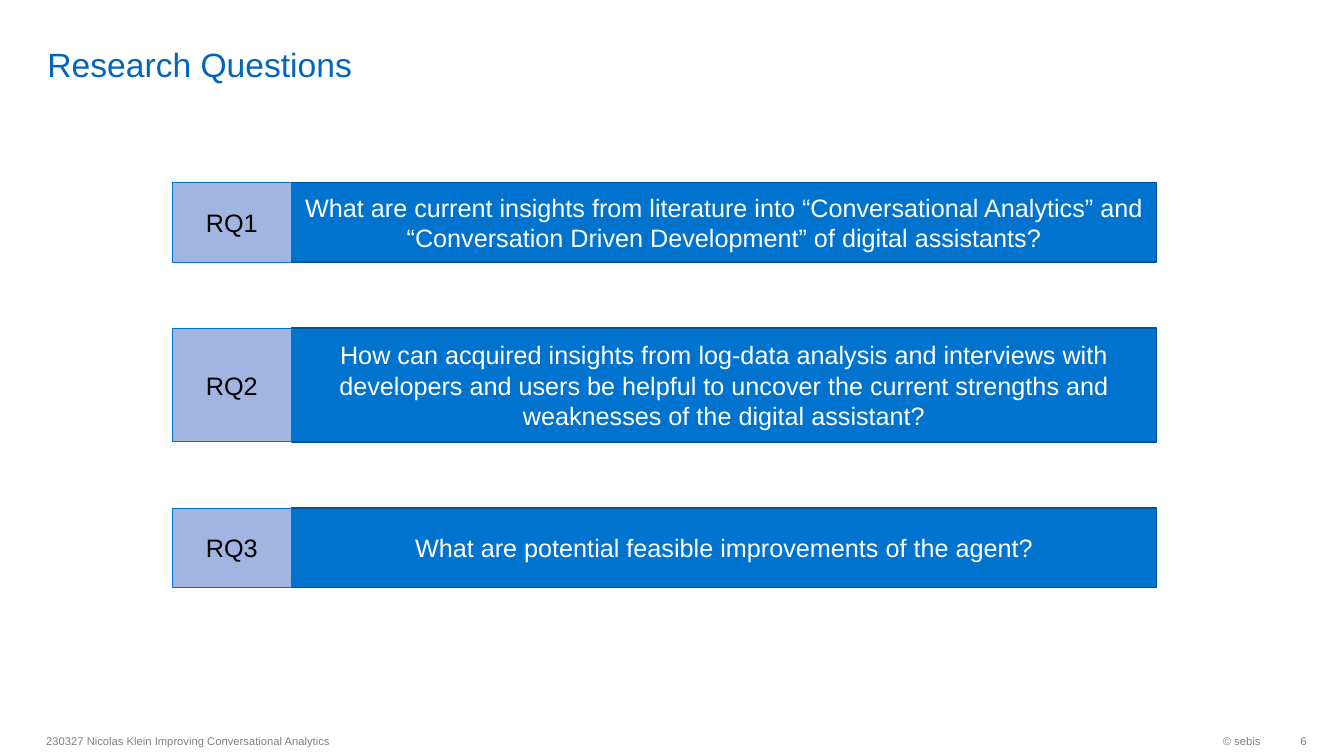
from pptx import Presentation
from pptx.dml.color import RGBColor
from pptx.enum.shapes import MSO_SHAPE
from pptx.enum.text import MSO_ANCHOR as Anchor, PP_ALIGN as Align
from pptx.util import Inches, Pt

# Content
HEADING = "Research Questions"
QUESTIONS = [  # label, question, row height
    ("RQ1", "What are current insights from literature into “Conversational Analytics” and "
            "“Conversation Driven Development” of digital assistants?", 0.79),
    ("RQ2", "How can acquired insights from log-data analysis and interviews with developers "
            "and users be helpful to uncover the current strengths and weaknesses of the "
            "digital assistant?", 1.13),
    ("RQ3", "What are potential feasible improvements of the agent?", 0.79),
]
FOOTER = [  # text, left, width, alignment, right inset
    ("230327 Nicolas Klein Improving Conversational Analytics", 0.36, 6.3, Align.LEFT, 0.1),
    ("© sebis", 10.26, 2.34, Align.RIGHT, 0.1),
    ("6", 12.6, 0.36, Align.RIGHT, 0),
]

# Colours
TITLE_BLUE = RGBColor(0x00, 0x65, 0xBD)
BLUE = RGBColor(0x00, 0x73, 0xCF)
DARK_BLUE = RGBColor(0x00, 0x55, 0x99)
LAVENDER = RGBColor(0xA2, 0xB5, 0xE1)
GREY = RGBColor(0x80, 0x80, 0x80)
WHITE = RGBColor(0xFF, 0xFF, 0xFF)
BLACK = RGBColor(0x00, 0x00, 0x00)

# Grid in inches
LABEL_LEFT, LABEL_WIDTH, QUESTION_WIDTH = 1.71, 1.18, 8.58
FIRST_TOP, ROW_GAP = 1.81, 0.655
FOOTER_TOP, FOOTER_HEIGHT = 7.19, 0.32


def write(holder, text, size, color, align, **frame_format):
    """Put one formatted paragraph into a shape."""
    frame = holder.text_frame
    frame_values = {"word_wrap": True, "vertical_anchor": Anchor.MIDDLE, **frame_format}
    for key, value in frame_values.items():
        setattr(frame, key, value)
    paragraph = frame.paragraphs[0]
    paragraph.alignment = align
    run = paragraph.add_run()
    run.text = text
    for key, value in {"name": "Arial", "size": Pt(size)}.items():
        setattr(run.font, key, value)
    run.font.color.rgb = color


def add_cell(slide, text, box, fill, line, line_width, color):
    cell = slide.shapes.add_shape(MSO_SHAPE.RECTANGLE, *map(Inches, box))
    cell.shadow.inherit = False
    cell.fill.solid()
    cell.fill.fore_color.rgb = fill
    cell.line.color.rgb = line
    cell.line.width = Pt(line_width)
    write(cell, text, 18, color, Align.CENTER)


def main():
    deck = Presentation()
    deck.slide_width, deck.slide_height = Inches(13.33), Inches(7.5)
    slide = deck.slides.add_slide(deck.slide_layouts[5])

    # Title
    title = slide.shapes.title
    title_box = {"left": 0.37, "top": 0.05, "width": 11.58, "height": 0.79}
    for key, value in title_box.items():
        setattr(title, key, Inches(value))
    write(title, HEADING, 24, TITLE_BLUE, Align.LEFT, vertical_anchor=Anchor.BOTTOM,
          margin_top=0, margin_bottom=0)

    # Footer
    for text, left, width, align, inset in FOOTER:
        note = slide.shapes.add_textbox(
            *map(Inches, (left, FOOTER_TOP, width, FOOTER_HEIGHT)))
        write(note, text, 8, GREY, align, margin_right=Inches(inset))

    # Question rows, stacked with equal gaps
    top = FIRST_TOP
    for label, question, height in QUESTIONS:
        add_cell(slide, question, (LABEL_LEFT + LABEL_WIDTH, top, QUESTION_WIDTH, height),
                 BLUE, DARK_BLUE, 0.85, WHITE)
        add_cell(slide, label, (LABEL_LEFT, top, LABEL_WIDTH, height),
                 LAVENDER, BLUE, 0.75, BLACK)
        top += height + ROW_GAP

    deck.save("out.pptx")


if __name__ == "__main__":
    main()
